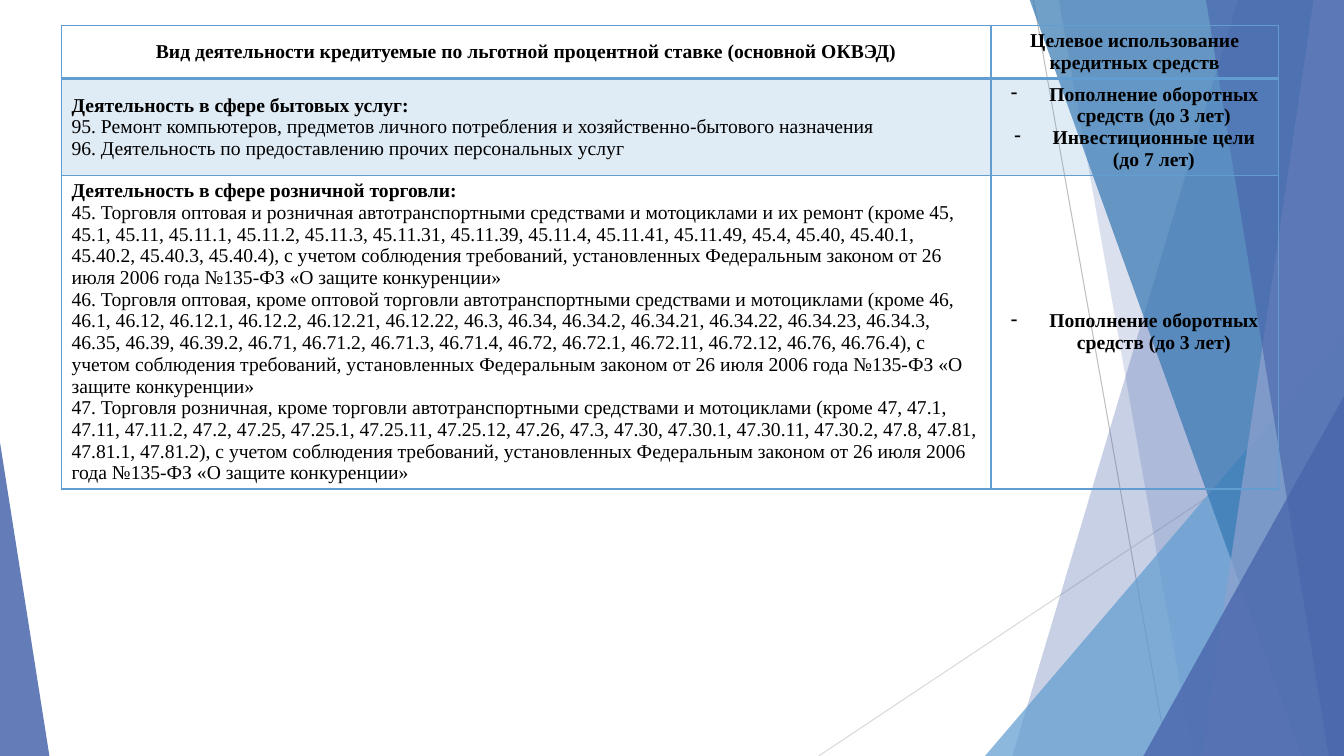
from dataclasses import dataclass

from lxml import etree
from pptx import Presentation
from pptx.dml.color import RGBColor
from pptx.enum.shapes import MSO_CONNECTOR, MSO_SHAPE
from pptx.enum.text import MSO_ANCHOR, PP_ALIGN
from pptx.oxml.ns import qn
from pptx.util import Pt

PX = 9144  # EMU in one px, 100 px to the inch
WIDTH, HEIGHT = 1333, 750

INDIGO = RGBColor(0x4A, 0x66, 0xAC)
SKY = RGBColor(0x62, 0x9D, 0xD1)
BLUE = RGBColor(0x34, 0x77, 0xB2)
LAVENDER = RGBColor(0x90, 0xA2, 0xCF)
GREY = RGBColor(0xBF, 0xBF, 0xBF)
LIGHT_GREY = RGBColor(0xD9, 0xD9, 0xD9)
BLACK = RGBColor(0, 0, 0)
FONT = "Times New Roman"


@dataclass
class Ray:
    start: tuple[int, int]
    end: tuple[int, int]
    color: RGBColor


@dataclass
class Band:
    """Full-height strip that reaches the right edge of the slide."""
    top_x: int
    bottom_x: int
    color: RGBColor
    alpha: int


@dataclass
class Wedge:
    """Triangle standing on the bottom edge; apex is 0 (left) or 1 (right)."""
    x: int
    y: int
    w: int
    apex: int
    color: RGBColor
    alpha: int


@dataclass
class Para:
    text: str
    bold: bool = False
    centered: bool = False
    dash: bool = False


@dataclass
class Row:
    height: int
    cells: list[list[Para]]
    tinted: bool = False


DECOR = [
    Ray((1025, 0), (1158, 750), GREY),
    Ray((1333, 403), (812, 750), LIGHT_GREY),
    Band(1228, 1004, INDIGO, 30),
    Band(1050, 1183, INDIGO, 20),
    Wedge(977, 333, 356, 1, SKY, 72),
    Band(1021, 1291, BLUE, 70),
    Band(1303, 1192, LAVENDER, 70),
    Band(1196, 1318, INDIGO, 65),
    Wedge(1134, 393, 199, 1, INDIGO, 80),
    Wedge(0, 439, 49, 0, INDIGO, 85),
]

LAW = ("с учетом соблюдения требований, установленных Федеральным законом "
       "от 26 июля 2006 года №135-ФЗ «О защите конкуренции»")
WORKING_CAPITAL = Para("Пополнение оборотных средств (до 3 лет)", True, True, True)
INVESTMENT = Para("Инвестиционные цели (до 7 лет)", True, True, True)

TABLE_X, TABLE_Y = 61, 25
COLUMNS = [922, 285]
ROWS = [
    Row(53, [
        [Para("Вид деятельности кредитуемые по льготной процентной ставке "
              "(основной ОКВЭД)", True, True)],
        [Para("Целевое использование кредитных средств", True, True)],
    ]),
    Row(96, [
        [Para("Деятельность в сфере бытовых услуг:", True),
         Para("95. Ремонт компьютеров, предметов личного потребления "
              "и хозяйственно-бытового назначения"),
         Para("96. Деятельность по предоставлению прочих персональных услуг")],
        [WORKING_CAPITAL, INVESTMENT],
    ], tinted=True),
    Row(311, [
        [Para("Деятельность в сфере розничной торговли:", True),
         Para("45. Торговля оптовая и розничная автотранспортными средствами "
              "и мотоциклами и их ремонт (кроме 45, 45.1, 45.11, 45.11.1, 45.11.2, "
              "45.11.3, 45.11.31, 45.11.39, 45.11.4, 45.11.41, 45.11.49, 45.4, 45.40, "
              f"45.40.1, 45.40.2, 45.40.3, 45.40.4), {LAW}"),
         Para("46. Торговля оптовая, кроме оптовой торговли автотранспортными "
              "средствами и мотоциклами (кроме 46, 46.1, 46.12, 46.12.1, 46.12.2, "
              "46.12.21, 46.12.22, 46.3, 46.34, 46.34.2, 46.34.21, 46.34.22, 46.34.23, "
              "46.34.3, 46.35, 46.39, 46.39.2, 46.71, 46.71.2, 46.71.3, 46.71.4, 46.72, "
              f"46.72.1, 46.72.11, 46.72.12, 46.76, 46.76.4), {LAW}"),
         Para("47. Торговля розничная, кроме торговли автотранспортными средствами "
              "и мотоциклами (кроме 47, 47.1, 47.11, 47.11.2, 47.2, 47.25, 47.25.1, "
              "47.25.11, 47.25.12, 47.26, 47.3, 47.30, 47.30.1, 47.30.11, 47.30.2, "
              f"47.8, 47.81, 47.81.1, 47.81.2), {LAW}")],
        [WORKING_CAPITAL],
    ]),
]


def fill_solid(fill, color: RGBColor, alpha: int) -> None:
    fill.solid()
    fill.fore_color.rgb = color
    clr = fill._xPr.find(qn("a:solidFill"))[0]
    etree.SubElement(clr, qn("a:alpha"), val=str(alpha * 1000))


def draw_ray(shapes, ray: Ray) -> None:
    ends = [v * PX for v in (*ray.start, *ray.end)]
    line = shapes.add_connector(MSO_CONNECTOR.STRAIGHT, *ends)
    line.line.color.rgb = ray.color
    line.line.width = Pt(0.75)
    etree.SubElement(line._element.spPr, qn("a:effectLst"))


def draw_facet(shapes, facet: Band | Wedge) -> None:
    if isinstance(facet, Band):
        outline = shapes.build_freeform(facet.top_x, -1, scale=PX)
        outline.add_line_segments(
            [(WIDTH, -1), (WIDTH, HEIGHT), (facet.bottom_x, HEIGHT)], close=True)
        sp = outline.convert_to_shape()
    else:
        box = [v * PX for v in (facet.x, facet.y, facet.w, HEIGHT - facet.y)]
        sp = shapes.add_shape(MSO_SHAPE.ISOSCELES_TRIANGLE, *box)
        sp.adjustments[0] = facet.apex
    sp.shadow.inherit = False
    sp.line.fill.background()
    fill_solid(sp.fill, facet.color, facet.alpha)


def set_borders(cell, top: int, bottom: int) -> None:
    tc_pr = cell._tc.get_or_add_tcPr()
    for side, width in (("L", 1), ("R", 1), ("T", top), ("B", bottom)):
        ln = etree.SubElement(tc_pr, qn(f"a:ln{side}"), w=str(Pt(width)))
        solid = etree.SubElement(ln, qn("a:solidFill"))
        etree.SubElement(solid, qn("a:srgbClr"), val=str(SKY))


def write_cell(cell, paras: list[Para]) -> None:
    cell.vertical_anchor = MSO_ANCHOR.MIDDLE
    tf = cell.text_frame
    for i, para in enumerate(paras):
        p = tf.add_paragraph() if i else tf.paragraphs[0]
        p.text = para.text
        p.alignment = PP_ALIGN.CENTER if para.centered else PP_ALIGN.LEFT
        p.font.name, p.font.size, p.font.bold = FONT, Pt(14), para.bold
        p.font.color.rgb = BLACK
        if para.dash:
            p_pr = p._p.get_or_add_pPr()
            p_pr.set("marL", str(38 * PX))
            p_pr.set("indent", str(-38 * PX))
            bullet = etree.Element(qn("a:buChar"), char="-")
            p_pr.insert(0, bullet)


def draw_table(shapes) -> None:
    size = sum(COLUMNS) * PX, sum(row.height for row in ROWS) * PX
    table = shapes.add_table(
        len(ROWS), len(COLUMNS), TABLE_X * PX, TABLE_Y * PX, *size).table
    table.first_row = table.horz_banding = False
    for column, width in zip(table.columns, COLUMNS):
        column.width = width * PX
    for i, row in enumerate(ROWS):
        table.rows[i].height = row.height * PX
        for j, paras in enumerate(row.cells):
            cell = table.cell(i, j)
            # The rule under the header is heavier
            set_borders(cell, top=2 if i == 1 else 1, bottom=2 if i == 0 else 1)
            if row.tinted:
                fill_solid(cell.fill, SKY, 20)
            else:
                cell.fill.background()
            write_cell(cell, paras)


def main() -> None:
    prs = Presentation()
    prs.slide_width, prs.slide_height = WIDTH * PX, HEIGHT * PX
    s = prs.slides.add_slide(prs.slide_layouts[6])
    # Faceted backdrop, back to front
    for item in DECOR:
        draw = draw_ray if isinstance(item, Ray) else draw_facet
        draw(s.shapes, item)
    # Lending terms
    draw_table(s.shapes)
    prs.save("out.pptx")


if __name__ == "__main__":
    main()
